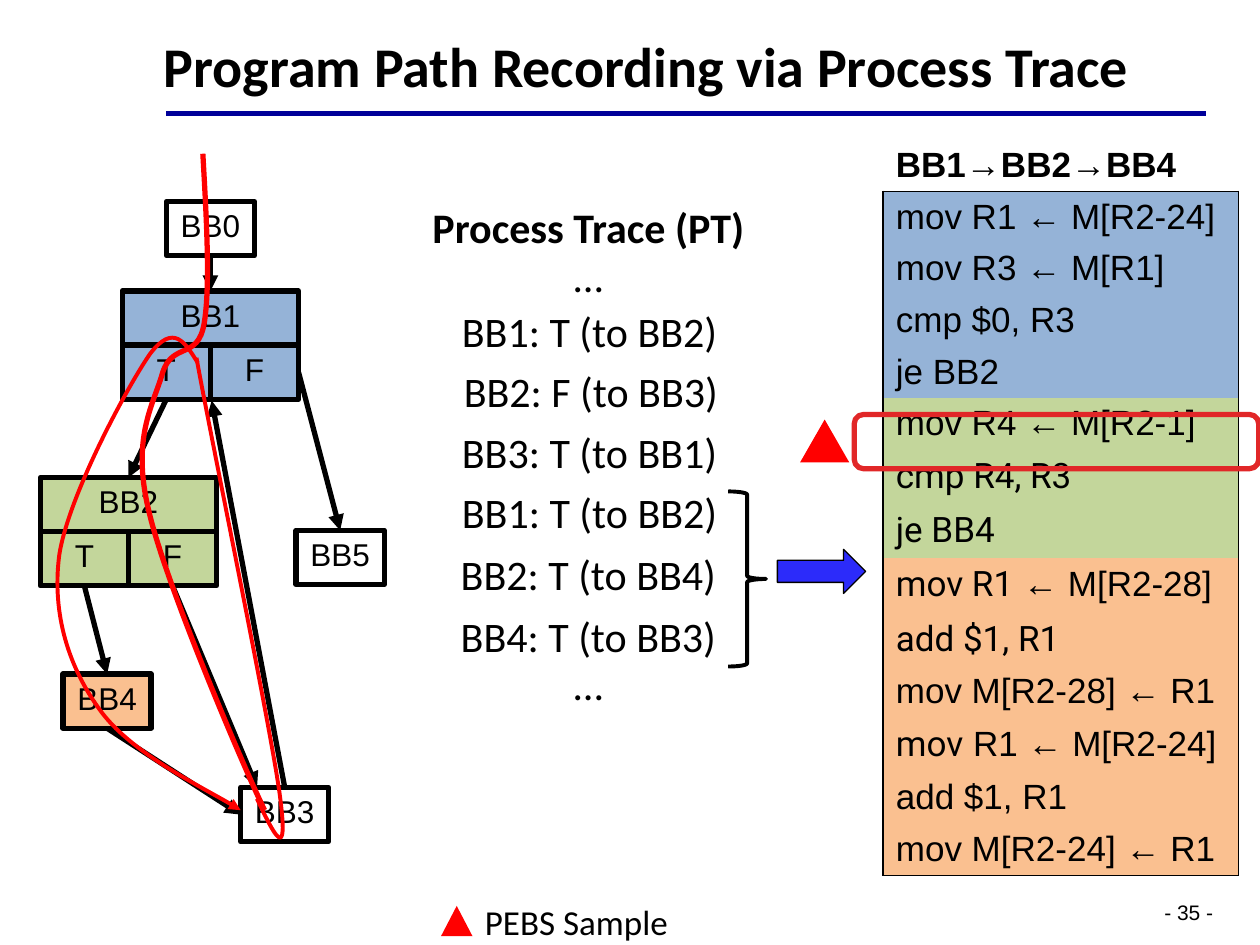
from dataclasses import dataclass

from pptx import Presentation
from pptx import util as u
from pptx.dml.color import RGBColor
from pptx.enum import shapes, text
from pptx.oxml import ns, xmlchemy

Inches, Pt = u.Inches, u.Pt
KIND, ALIGN, ANCHOR = shapes.MSO_SHAPE, text.PP_ALIGN, text.MSO_ANCHOR
TOP, LEFT, BOTTOM, RIGHT = range(4)  # connection sites


@dataclass(frozen=True)
class Theme:
    ink: str = "000000"
    paper: str = "FFFFFF"
    rule: str = "000099"
    blue: str = "95B3D7"
    green: str = "C3D69B"
    orange: str = "FAC090"
    arrow: str = "2C2BFA"
    trace: str = "FF0000"
    highlight: str = "E12728"
    heading_font: str = "Calibri"
    code_font: str = "Arial"
    alt_font: str = "Roboto"
    title: int = 32
    log: int = 24
    code: int = 20
    node: int = 18
    page: int = 12
    leading: float = 0.8


@dataclass(frozen=True)
class Box:
    left: float
    top: float
    width: float
    height: float

    def inner(self, x, y, width, height):
        return Box(self.left + x, self.top + y, width, height)

    def point(self, x, y):
        return Inches(self.left + x), Inches(self.top + y)

    def emu(self):
        return [Inches(v) for v in (self.left, self.top, self.width, self.height)]


THEME = Theme()


def add_xml(parent, tag, **attributes):
    child = xmlchemy.OxmlElement(tag)
    for name, value in attributes.items():
        child.set(name, str(value))
    parent.append(child)
    return child


def style_run(run, size, font, bold=False):
    run.font.size, run.font.name, run.font.bold = Pt(size), font, bold
    run.font.color.rgb = RGBColor.from_string(THEME.ink)


def style_paragraph(paragraph, size, font, align=ALIGN.LEFT, bold=False):
    paragraph.alignment, paragraph.line_spacing = align, THEME.leading
    for run in paragraph.runs:
        style_run(run, size, font, bold)


def style_line(item, color, weight, arrow=False):
    item.line.color.rgb = RGBColor.from_string(color)
    item.line.width = Pt(weight)
    if arrow:
        add_xml(item._element.spPr.find(ns.qn("a:ln")), "a:tailEnd", type="triangle")


def paint(shape, fill=None, line=None, weight=1, arrow=False):
    shape.shadow.inherit = False
    if fill:
        shape.fill.solid()
        shape.fill.fore_color.rgb = RGBColor.from_string(fill)
    else:
        shape.fill.background()
    if line:
        style_line(shape, line, weight, arrow)
    else:
        shape.line.fill.background()


def add_figure(slide, kind, box, fill=None, line=None, weight=1):
    figure = slide.shapes.add_shape(kind, *box.emu())
    paint(figure, fill, line, weight)
    return figure


def add_line(slide, start, end, color, arrow=False):
    line = slide.shapes.add_connector(shapes.MSO_CONNECTOR.STRAIGHT, *start, *end)
    style_line(line, color, 3, arrow)
    add_xml(line._element.spPr, "a:effectLst")
    return line


def add_label(slide, box, lines, size, font, align=ALIGN.LEFT, bold_first=False):
    frame = slide.shapes.add_textbox(*box.emu()).text_frame
    frame.word_wrap = False
    frame.text = "\n".join(lines)
    for i, paragraph in enumerate(frame.paragraphs):
        style_paragraph(paragraph, size, font, align, bold_first and i == 0)
        if i:
            paragraph.space_before = Pt(size * 0.2)
    return frame


def add_header(slide, box):
    title = slide.shapes.title
    title.left, title.top, title.width, title.height = box.emu()
    frame = title.text_frame
    frame.text = "Program Path Recording via Process Trace"
    frame.auto_size, frame.vertical_anchor = text.MSO_AUTO_SIZE.NONE, ANCHOR.BOTTOM
    style_paragraph(frame.paragraphs[0], THEME.title, THEME.heading_font, bold=True)
    frame.paragraphs[0].line_spacing = 0.9
    add_line(slide, box.point(0.12, 0.76), box.point(8.37, 0.76), THEME.rule)


def add_code_table(slide, box):
    arial, roboto = THEME.code_font, THEME.alt_font
    rows = [
        (THEME.paper, [("BB1→BB2→BB4", arial)]),
        (THEME.blue, [("mov R1 ← M[R2-24]", arial)]),
        (THEME.blue, [("mov R3 ← M[R1]", arial)]),
        (THEME.blue, [("cmp $0, R3", arial)]),
        (THEME.blue, [("je BB2", arial)]),
        (THEME.green, [("mov R4 ← M[R2-1]", arial)]),
        (THEME.green, [("cmp R4, R3", roboto)]),
        (THEME.green, [("je BB4", roboto)]),
        (THEME.orange, [("mov R1", roboto), (" ← M[R2-28]", arial)]),
        (THEME.orange, [("add $1, R1", roboto)]),
        (THEME.orange, [("mov M[R2-28] ← R1", arial)]),
        (THEME.orange, [("mov", roboto), (" R1 ← M[R2-24]", arial)]),
        (THEME.orange, [("add $1, R1", arial)]),
        (THEME.orange, [("mov M[R2-24] ← R1", arial)]),
    ]
    table = slide.shapes.add_table(len(rows), 1, *box.emu()).table
    table.horz_banding = False
    for i, (fill, pieces) in enumerate(rows):
        has_roboto = any(font == roboto for _, font in pieces)
        table.rows[i].height = Inches(0.43 if has_roboto else 0.41)
        cell = table.cell(i, 0)
        cell.margin_top = Inches(0.1)
        paragraph = cell.text_frame.paragraphs[0]
        paragraph.line_spacing = THEME.leading
        for words, font in pieces:
            run = paragraph.add_run()
            run.text = words
            style_run(run, THEME.code, font, bold=i == 0)
        # Frame the body; the header only has its lower edge
        edges = {"L": i > 0, "R": i > 0, "T": i == 1, "B": i in (0, len(rows) - 1)}
        for side, shown in edges.items():
            border = add_xml(cell._tc.get_or_add_tcPr(), f"a:ln{side}", w=Pt(1))
            stroke = add_xml(border, "a:solidFill" if shown else "a:noFill")
            if shown:
                add_xml(stroke, "a:srgbClr", val=THEME.ink)
        cell.fill.solid()
        cell.fill.fore_color.rgb = RGBColor.from_string(fill)


def add_trace_curve(slide, box, points, weight, arrow=False):
    """Draw a chain of cubic curves: a start, then three points per curve."""
    track = [box.point(*p) for p in points]
    builder = slide.shapes.build_freeform(*track[0])
    builder.add_line_segments(track[3::3], close=False)
    curve = builder.convert_to_shape()
    # Bend each segment with its two control points
    for i, segment in enumerate(list(curve._element.iter(ns.qn("a:lnTo")))):
        bend = xmlchemy.OxmlElement("a:cubicBezTo")
        for x, y in track[3 * i + 1:3 * i + 4]:
            add_xml(bend, "a:pt", x=x - curve.left, y=y - curve.top)
        segment.getparent().replace(segment, bend)
    paint(curve, line=THEME.trace, weight=weight, arrow=arrow)


def add_flow_graph(slide, box):
    half, high = 0.7, 0.43
    nodes = {}

    def add_node(key, label, x, y, width=half, fill=None):
        node = add_figure(slide, KIND.RECTANGLE, box.inner(x, y, width, high),
                          fill, THEME.ink, 3)
        node.text_frame.text = label
        node.text_frame.word_wrap = False
        node.text_frame.vertical_anchor = ANCHOR.MIDDLE
        style_paragraph(node.text_frame.paragraphs[0], THEME.node, THEME.code_font,
                        ALIGN.CENTER)
        nodes[key] = node

    # Plain blocks, then blocks with a taken / not taken pair
    for name, x, y, fill in [("BB0", 1, 0.38, None), ("BB3", 1.59, 5.03, None),
                             ("BB4", 0.18, 4.13, THEME.orange), ("BB5", 2.03, 2.99, None)]:
        add_node(name, name, x, y, fill=fill)
    for name, x, y, fill in [("BB1", 0.65, 1.09, THEME.blue), ("BB2", 0, 2.57, THEME.green)]:
        add_node(name, name, x, y, 2 * half, fill)
        add_node(name + "T", "T", x, y + high, fill=fill)
        add_node(name + "F", "F", x + half, y + high, fill=fill)

    # Edges: block and side, to block and side or to a point
    for source, side, target, end in [
            ("BB0", BOTTOM, "BB1", TOP), ("BB1T", BOTTOM, "BB2", TOP),
            ("BB1F", RIGHT, "BB5", TOP), ("BB2T", BOTTOM, "BB4", TOP),
            ("BB2F", BOTTOM, None, (1.72, 5.03)), ("BB4", BOTTOM, "BB3", LEFT),
            ("BB3", TOP, None, (1.36, 1.96))]:
        finish = box.point(0, 0) if target else box.point(*end)
        edge = add_line(slide, box.point(0, 0), finish, THEME.ink, arrow=True)
        edge.begin_connect(nodes[source], side)
        if target:
            edge.end_connect(nodes[target], end)

    # Executed path
    add_trace_curve(slide, box, [
        (1.29, 0), (1.32, 0.53), (1.35, 1.06), (1.3, 1.35), (1.25, 1.64), (1.05, 1.49),
        (0.97, 1.74), (0.9, 1.99), (0.72, 2.25), (0.86, 2.83), (0.99, 3.41),
        (1.64, 4.93), (1.78, 5.21)], 3)
    add_trace_curve(slide, box, [
        (1.72, 5.12), (1.85, 5.39), (1.98, 5.67), (1.9, 5.08), (1.82, 4.5),
        (1.34, 2.18), (1.24, 1.62)], 2.25)
    add_trace_curve(slide, box, [
        (1.25, 1.66), (1.15, 1.5), (1.06, 1.34), (0.87, 1.59), (0.69, 1.85), (0.22, 2.72),
        (0.15, 3.19), (0.09, 3.66), (0.23, 4.08), (0.47, 4.41), (0.71, 4.75),
        (1.39, 5.08), (1.59, 5.21)], 2.25, arrow=True)


def add_trace_log(slide, box):
    entries = [(0.24, 0.83, ["BB1: T (to BB2)"]), (0.25, 1.31, ["BB2: F (to BB3)"]),
               (0.24, 1.79, ["BB3: T (to BB1)"]), (0.24, 2.27, ["BB1: T (to BB2)"]),
               (0.23, 2.76, ["BB2: T (to BB4)"]), (0.23, 3.25, ["BB4: T (to BB3)", "…"])]
    add_label(slide, box.inner(0, 0.01, box.width, 0.83), ["Process Trace (PT)", "…"],
              THEME.log, THEME.heading_font, ALIGN.CENTER, bold_first=True)
    for x, y, lines in entries:
        add_label(slide, box.inner(x, y, 2.24, 0.42 * len(lines)),
                  lines, THEME.log, THEME.heading_font, ALIGN.CENTER)
    # The last three entries lead to the code
    add_figure(slide, KIND.RIGHT_BRACE, box.inner(2.46, 2.28, 0.3, 1.39),
               line=THEME.ink, weight=2.25)
    add_figure(slide, KIND.RIGHT_ARROW, box.inner(2.85, 2.74, 0.7, 0.35),
               THEME.arrow, THEME.ink, 0.75)


def add_sample_mark(slide, box):
    add_figure(slide, KIND.FLOWCHART_EXTRACT, box.inner(0, 0.04, 0.39, 0.34), THEME.trace)
    add_figure(slide, KIND.ROUNDED_RECTANGLE, box.inner(0.43, 0, 3.21, box.height),
               line=THEME.highlight, weight=3)


def add_footer(slide, box):
    add_figure(slide, KIND.FLOWCHART_EXTRACT, box.inner(0, 0.07, 0.25, 0.24), THEME.trace)
    add_label(slide, box.inner(0.25, 0.04, 1.67, 0.38), ["PEBS Sample"],
              THEME.code, THEME.heading_font)
    page = add_label(slide, box.inner(5.69, 0, 0.52, 0.24), ["- 35 -"],
                     THEME.page, THEME.code_font)
    page.margin_left = page.margin_right = Inches(0.05)
    page.margin_top = page.margin_bottom = Inches(0.02)
    page.paragraphs[0].line_spacing = 1.0


def main():
    deck = Presentation()
    deck.slide_width, deck.slide_height = Inches(10), Inches(7.5)
    slide = deck.slides.add_slide(deck.slide_layouts[5])
    add_header(slide, Box(1.2, 0.14, 8.8, 0.7))
    add_code_table(slide, Box(7.01, 1.11, 2.82, 5.84))
    add_flow_graph(slide, Box(0.32, 1.22, 2.73, 5.46))
    add_trace_log(slide, Box(3.32, 1.62, 2.7, 4.09))
    add_sample_mark(slide, Box(6.35, 3.29, 3.64, 0.43))
    add_footer(slide, Box(3.5, 7.12, 6.21, 0.42))
    deck.save("out.pptx")


if __name__ == "__main__":
    main()
